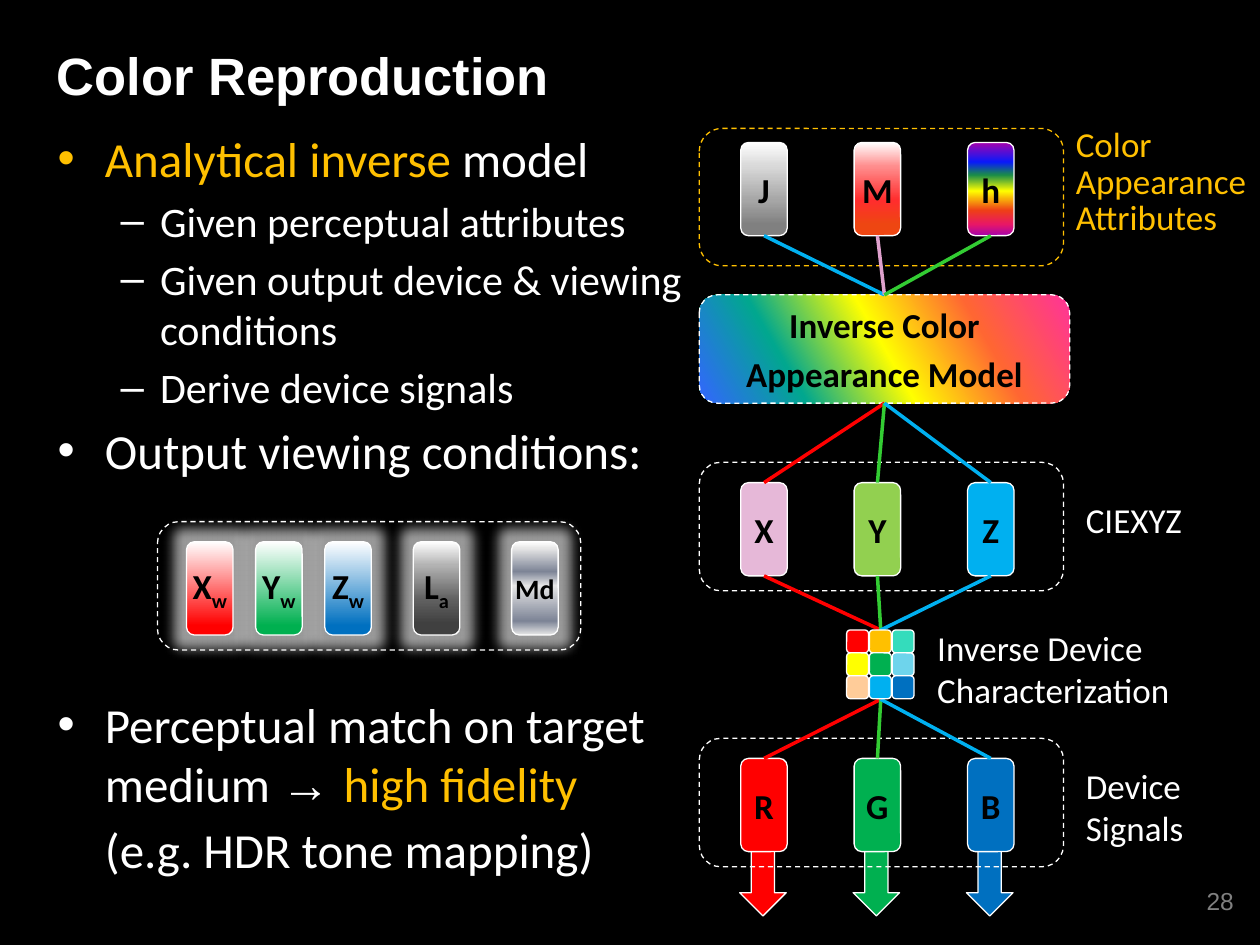
from dataclasses import dataclass
from lxml.etree import SubElement
from pptx import Presentation
from pptx.dml.color import RGBColor
from pptx.enum.dml import MSO_LINE
from pptx.enum.shapes import MSO_CONNECTOR, MSO_SHAPE
from pptx.enum.text import MSO_ANCHOR, MSO_AUTO_SIZE, PP_ALIGN
from pptx.oxml.ns import qn
from pptx.util import Pt


@dataclass
class Theme:
    # Fonts and type sizes
    head: str = "Arial"
    body: str = "Calibri"
    title: int = 30
    main: int = 28
    sub: int = 24
    label: int = 20
    small: int = 16
    page: int = 14
    # Colours
    black: str = "000000"
    white: str = "FFFFFF"
    gold: str = "FFC000"
    grey: str = "808080"
    red: str = "FF0000"
    green: str = "00B050"
    blue: str = "0070C0"
    sky: str = "00B0F0"
    lime: str = "33CC33"
    mauve: str = "DFA1CD"


def put(item, vals):
    for name, val in vals.items():
        setattr(item, name, val)


class Deck:
    def __init__(self, theme):
        self.theme = theme
        self.prs = Presentation()
        put(self.prs, {"slide_width": Pt(720), "slide_height": Pt(540)})
        self.slide = self.prs.slides.add_slide(self.prs.slide_layouts[5])
        self.shapes = self.slide.shapes
        fill = self.slide.background.fill
        fill.solid()
        fill.fore_color.rgb = RGBColor.from_string(theme.black)

    def run(self, para, text, size, color, font=None, **more):
        run = para.add_run()
        run.text = text
        put(run.font, {"size": Pt(size), "name": font or self.theme.body, **more})
        run.font.color.rgb = RGBColor.from_string(color)
        return run

    def title(self, text, x, y, w, h):
        box = self.shapes.title
        put(box, {"left": Pt(x), "top": Pt(y), "width": Pt(w), "height": Pt(h)})
        put(box.text_frame, {"auto_size": MSO_AUTO_SIZE.NONE, "margin_top": Pt(6.5),
                             "vertical_anchor": MSO_ANCHOR.TOP})
        para = box.text_frame.paragraphs[0]
        para.alignment = PP_ALIGN.LEFT
        self.run(para, text, self.theme.title, self.theme.white, self.theme.head, bold=True)

    def box(self, x, y, w, h, wrap=True):
        frame = self.shapes.add_textbox(Pt(x), Pt(y), Pt(w), Pt(h)).text_frame
        frame.word_wrap = wrap
        return frame

    def paras(self, frame, count):
        yield frame.paragraphs[0]
        for _ in range(count - 1):
            yield frame.add_paragraph()

    def note(self, lines, x, y, w, h, size=None, color=None, font=None, wrap=False, **fmt):
        frame = self.box(x, y, w, h, wrap)
        gap = fmt.pop("space_before", Pt(0))
        for i, para in enumerate(self.paras(frame, len(lines))):
            put(para, {**fmt, "space_before": gap if i else Pt(0)})
            self.run(para, lines[i], size or self.theme.label, color or self.theme.white, font)

    def list(self, items, x, y, w, h):
        frame = self.box(x, y, w, h)
        for para, (mark, gap, runs) in zip(self.paras(frame, len(items)), items):
            deep = mark == "–"
            left, hang = (58.5, 22.5) if deep else (27, 27)
            prop = para._p.get_or_add_pPr()
            prop.set("marL", str(Pt(left)))
            prop.set("indent", str(-Pt(hang) if mark else 0))
            if mark:
                SubElement(prop, qn("a:buFont"), typeface=self.theme.head)
                SubElement(prop, qn("a:buChar"), char=mark)
            para.space_before = Pt(gap)
            size = self.theme.sub if deep else self.theme.main
            for text, color, font in runs:
                self.run(para, text, size, color, font)

    def shape(self, kind, x, y, w, h, fill=None, line=None, dash=False, angle=90):
        """A fill is a colour, a list of (percent, colour) stops, or None."""
        item = self.shapes.add_shape(kind, Pt(x), Pt(y), Pt(w), Pt(h))
        item.shadow.inherit = False
        if fill is None:
            item.fill.background()
        elif isinstance(fill, str):
            item.fill.solid()
            item.fill.fore_color.rgb = RGBColor.from_string(fill)
        else:
            item.fill.gradient()
            item.fill.gradient_angle = 360 - angle
            stops = item._element.spPr.find(qn("a:gradFill")).find(qn("a:gsLst"))
            stops.clear()
            for pos, color in fill:
                stop = SubElement(stops, qn("a:gs"), pos=str(pos * 1000))
                SubElement(stop, qn("a:srgbClr"), val=color)
        item.line.width = Pt(0.75)
        item.line.color.rgb = RGBColor.from_string(line or self.theme.white)
        if dash:
            item.line.dash_style = MSO_LINE.DASH
        return item

    def block(self, lines, *place, size=None, low="", **look):
        """A rounded box with bold text; low is a subscript."""
        item = self.shape(MSO_SHAPE.ROUNDED_RECTANGLE, *place, **look)
        frame = item.text_frame
        put(frame, {"margin_left": 0, "margin_right": 0, "vertical_anchor": MSO_ANCHOR.MIDDLE})
        size = size or self.theme.label
        for i, para in enumerate(self.paras(frame, len(lines))):
            put(para, {"alignment": PP_ALIGN.CENTER, "space_before": Pt(4 if i else 0)})
            self.run(para, lines[i], size, self.theme.black, bold=True)
            if low:
                run = self.run(para, low, size, self.theme.black, bold=True)
                run.font._element.set("baseline", "-25000")
        return item

    def glow(self, item, radius, alpha):
        halo = SubElement(item._element.spPr.find(qn("a:effectLst")), qn("a:glow"), rad=str(Pt(radius)))
        color = SubElement(halo, qn("a:srgbClr"), val=self.theme.white)
        SubElement(color, qn("a:alpha"), val=str(alpha * 1000))

    def frame(self, x, y, w, h, line=None):
        self.shape(MSO_SHAPE.ROUNDED_RECTANGLE, x, y, w, h, line=line, dash=True)

    def fan(self, hub, xs, y, colors):
        """Lines from one hub point to a row of points."""
        for x, color in zip(xs, colors):
            line = self.shapes.add_connector(MSO_CONNECTOR.STRAIGHT, Pt(hub[0]), Pt(hub[1]), Pt(x), Pt(y))
            line.line.width = Pt(2)
            line.line.color.rgb = RGBColor.from_string(color)
            SubElement(line._element.spPr, qn("a:effectLst"))


def main():
    t = Theme()
    deck = Deck(t)
    wide, tall = 26.6, 53.3
    cols = [423.3 + 64.8 * i for i in range(3)]
    mids = [x + wide / 2 for x in cols]
    rows = {"look": 81.4, "xyz": 275.8, "rgb": 433.4}
    primary = [t.red, t.green, t.blue]

    # Output arrows
    for x, color in zip(cols, primary):
        deck.shape(MSO_SHAPE.DOWN_ARROW, x - 0.6, 483.8, wide, 39.6, color)

    # Title, bullets and page number
    deck.title("Color Reproduction", 25.2, 18, 583.2, 39.6)
    deck.list([
        ("•", 0, [("Analytical inverse ", t.gold, t.body), ("model", t.white, t.body)]),
        ("–", 4.4, [("Given perceptual attributes", t.white, t.body)]),
        ("–", 4.4, [("Given output device & viewing conditions", t.white, t.body)]),
        ("–", 4.4, [("Derive device signals", t.white, t.body)]),
        ("•", 4.6, [("Output viewing conditions:", t.white, t.body)]),
        ("•", 123, [("Perceptual match on target medium ", t.white, t.body),
                    ("→ ", t.white, t.head), ("high fidelity", t.gold, t.body)]),
        ("", 4.6, [("(e.g. HDR tone mapping)", t.white, t.body)]),
    ], 25.9, 70, 378.7, 457.8)
    deck.note(["28"], 675.4, 502.6, 36.7, 37.4, t.page, t.grey, t.head, True, alignment=PP_ALIGN.RIGHT)

    # Three rows of signals
    hues = [(0, "A603AB"), (21, "0819FB"), (35, "1A8D48"), (52, "FFFF00"),
            (73, "EE3F17"), (88, "E81766"), (100, "A603AB")]
    shades = [(0, t.white), (25, "D9D9D9"), (62, "A6A6A6"), (88, t.grey)]
    reds = [(0, t.white), (25, "FF8F8F"), (62, "FF2D2D"), (88, "EE4612")]
    fills = {"look": [shades, reds, hues], "xyz": ["E6B8D8", "92D050", t.sky], "rgb": primary}
    names = {"look": "JMh", "xyz": "XYZ", "rgb": "RGB"}
    for row, y in rows.items():
        for x, name, fill in zip(cols, names[row], fills[row]):
            deck.block([name], x, y, wide, tall, fill=fill)

    # Dashed frames and their labels
    deck.frame(399.6, 73.4, 208.1, 78.5, t.gold)
    deck.frame(399.6, 264.2, 208.1, 73.4)
    deck.frame(399.6, 421.9, 208.1, 73.4)
    deck.note(["Color", "Appearance", "Attributes"], 607.7, 73.4, 112.3, 68.4, color=t.gold,
              wrap=True, line_spacing=Pt(17), space_before=Pt(4))
    deck.note(["CIEXYZ"], 613.4, 281.5, 69.8, 31.7)
    deck.note(["Device", "Signals"], 613.4, 433.4, 71.3, 55.4)
    deck.note(["Inverse Device", "Characterization"], 528.5, 354.2, 149, 55.4)

    # Inverse model
    deck.block(["Inverse Color", "Appearance Model"], 399.6, 168.5, 211.7, 61.9, dash=True, angle=150,
               fill=[(0, "FF3399"), (25, "FF6633"), (50, "FFFF00"), (75, "01A78F"), (100, "3366FF")])

    # Lines between the stages
    paths = [t.red, t.lime, t.sky]
    deck.fan((505.4, 168.5), mids, rows["look"] + tall, [t.sky, t.mauve, t.lime])
    deck.fan((505.4, 230.4), mids, rows["xyz"], paths)
    deck.fan((503.3, 360), mids, rows["xyz"] + tall, paths)
    deck.fan((503.3, 399.6), mids, rows["rgb"], paths)

    # Device lookup tiles
    tiles = [t.red, t.gold, "34DCBC", "FFFF00", t.green, "6ED4EC", "FFCC99", t.sky, t.blue]
    for i, color in enumerate(tiles):
        deck.shape(MSO_SHAPE.ROUNDED_RECTANGLE, 483.8 + i % 3 * 13, 360 + i // 3 * 13.1, 12.5, 13.1, color)

    # Output viewing conditions
    steel = list(zip((0, 7, 32, 47, 85, 100), (t.white, "E6E6E6", "7D8496", "E6E6E6", "7D8496", "E6E6E6")))
    dark = [(0, t.white), (25, "B3B3B3"), (62, "606060"), (88, "404040")]
    white = [(name, "w", 106.6 + 39.5 * i, [(0, t.white), (90, color)], t.label)
             for i, (name, color) in enumerate(zip("XYZ", primary))]
    other = [("L", "a", 236.2, dark, t.label), ("Md", "", 292.4, steel, t.small)]
    for name, low, x, fill, size in white + other:
        item = deck.block([name], x, 309.6, wide, tall, fill=fill, size=size, low=low)
        deck.glow(item, 14, 60)
    deck.frame(90, 298.1, 241.9, 73.4)

    deck.prs.save("out.pptx")


if __name__ == "__main__":
    main()
